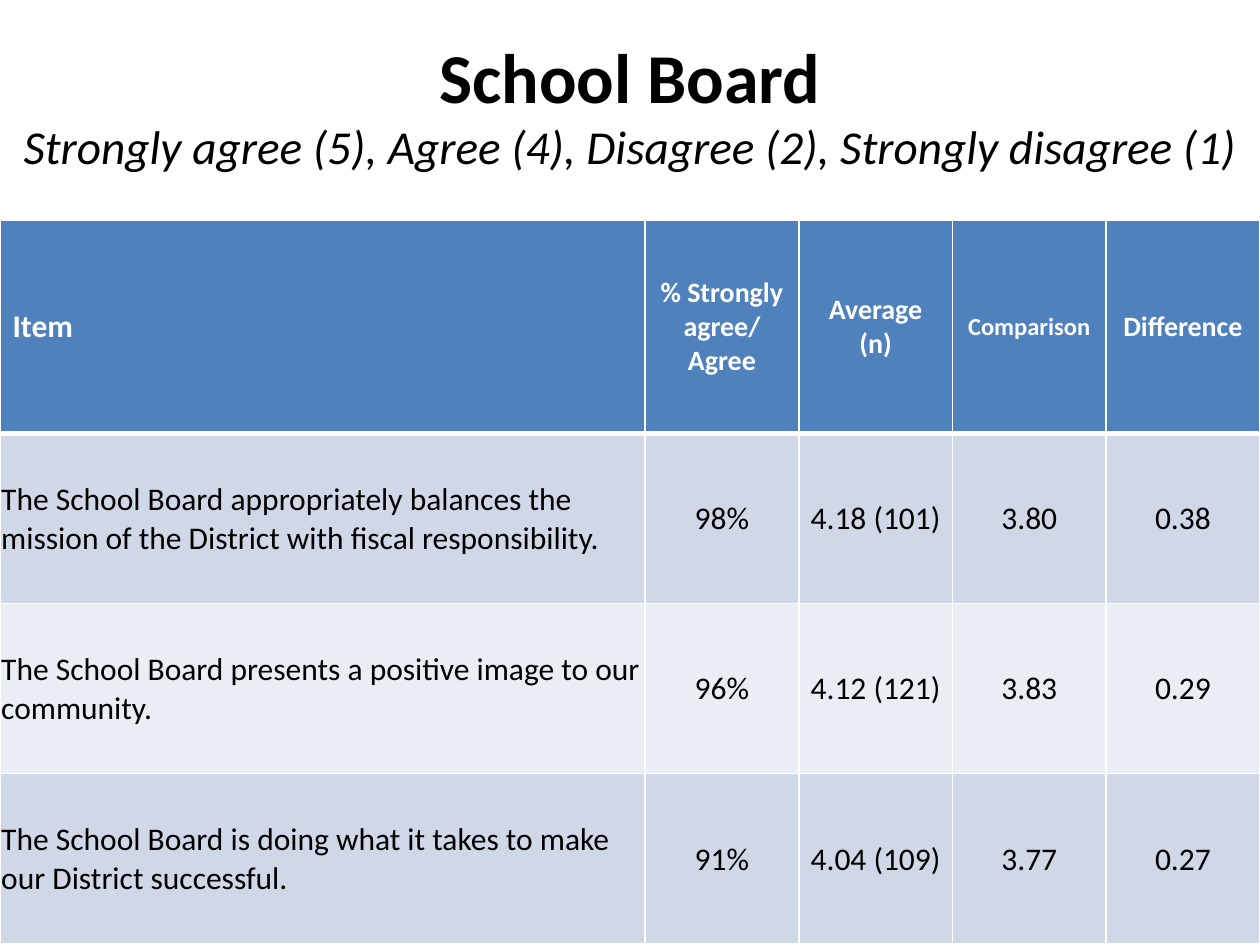
"""Build the School Board survey results slide."""
import pptx
import pptx.dml.color
import pptx.enum.text
import pptx.oxml
import pptx.oxml.ns
import pptx.util

COLORS = {"header": "4F81BD", "odd": "D0D8E8", "even": "E9EDF4", "light": "FFFFFF", "dark": "000000"}
ALIGN = pptx.enum.text.PP_ALIGN
MIDDLE = pptx.enum.text.MSO_ANCHOR.MIDDLE


def add_span(para, text, color, **formats):
    span = para.add_run()
    span.text = text
    span.font.color.rgb = pptx.dml.color.RGBColor.from_string(COLORS[color])
    for name, value in {"name": "Calibri", **formats}.items():
        setattr(span.font, name, value)


def add_borders(cell, widths):
    for index, (side, points) in enumerate(widths.items()):
        line = pptx.oxml.parse_xml(
            f'<a:ln{side} {pptx.oxml.ns.nsdecls("a")} w="{pptx.util.Pt(points)}"><a:solidFill>'
            f'<a:srgbClr val="{COLORS["light"]}"/></a:solidFill></a:ln{side}>'
        )
        cell._tc.get_or_add_tcPr().insert(index, line)


deck = pptx.Presentation()
deck.slide_width = pptx.util.Inches(10)
deck.slide_height = pptx.util.Inches(7.5)
page = deck.slides.add_slide(deck.slide_layouts[6])
width, height = deck.slide_width, deck.slide_height

box = page.shapes.add_textbox(0, 0, width, int(height * 0.22))
box.text_frame.word_wrap = True
box.text_frame.vertical_anchor = MIDDLE
para = box.text_frame.paragraphs[0]
para.alignment = ALIGN.CENTER
add_span(para, "School Board", "dark", size=pptx.util.Pt(40), bold=True)
para.add_line_break()
add_span(
    para,
    "Strongly agree (5), Agree (4), Disagree (2), Strongly disagree (1)",
    "dark",
    size=pptx.util.Pt(27),
    italic=True,
)

rows = [
    ["Item", "% Strongly agree/ Agree", "Average (n)", "Comparison", "Difference"],
    ["The School Board appropriately balances the mission of the District with fiscal responsibility.",
     "98%", "4.18 (101)", "3.80", "0.38"],
    ["The School Board presents a positive image to our community.",
     "96%", "4.12 (121)", "3.83", "0.29"],
    ["The School Board is doing what it takes to make our District successful.",
     "91%", "4.04 (109)", "3.77", "0.27"],
]
header_sizes = [18, 16, 16, 14, 16]
column_widths = [5.12] + [1.22] * 4
row_heights = [1.69] + [1.35] * 3
insets = {"margin_left": 0.01, "margin_top": 0.01, "margin_right": 0.01, "margin_bottom": 0}

top = pptx.util.Inches(1.75)
table = page.shapes.add_table(len(rows), len(column_widths), 0, top, width, height - top).table
for column, inches in zip(table.columns, column_widths):
    column.width = pptx.util.Inches(inches)

for row_index, texts in enumerate(rows):
    table.rows[row_index].height = pptx.util.Inches(row_heights[row_index])
    is_header = row_index == 0
    fill = "header" if is_header else ("even", "odd")[row_index % 2]
    for column_index, text in enumerate(texts):
        cell = table.cell(row_index, column_index)
        cell.vertical_anchor = MIDDLE
        cell.fill.solid()
        cell.fill.fore_color.rgb = pptx.dml.color.RGBColor.from_string(COLORS[fill])
        if not is_header:
            for name, inches in insets.items():
                setattr(cell, name, pptx.util.Inches(inches))
        para = cell.text_frame.paragraphs[0]
        para.alignment = ALIGN.CENTER if column_index else ALIGN.LEFT
        points = header_sizes[column_index] if is_header else 18
        add_span(para, text, "light" if is_header else "dark", size=pptx.util.Pt(points), bold=is_header)
        add_borders(cell, {"L": 1, "R": 1, "T": 3 if row_index == 1 else 1, "B": 3 if is_header else 1})

deck.save("out.pptx")
